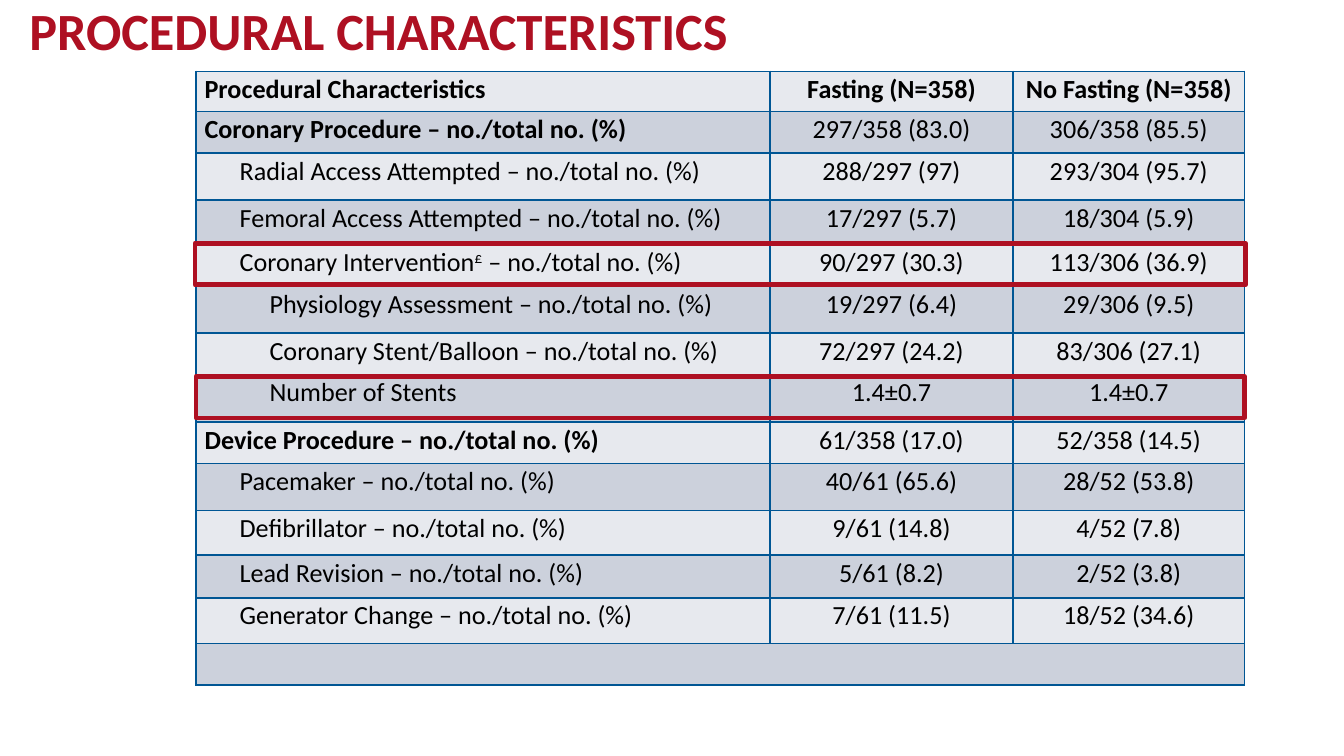
from dataclasses import dataclass

from lxml import etree
from pptx import Presentation
from pptx.dml.color import RGBColor
from pptx.enum import shapes, text
from pptx.oxml.ns import qn
from pptx.util import Pt


@dataclass(frozen=True)
class Theme:
    font: str = "Calibri"
    title_size: float = 28
    cell_size: float = 14
    accent: str = "AE1022"
    ink: str = "000000"
    border: str = "005694"
    bands: tuple = ("E7E9EE", "CCD1DC")


THEME = Theme()
INDENTS = (0, 18.8, 34.8)
COLUMN_WIDTHS = (307.4, 130.3, 123.9)
ROW_HEIGHTS = (21.6, 22.3, 25.2, 23.8, 22.3, 25.2, 22.3,
               25.2, 22.3, 25.2, 23.8, 23, 24.5, 22.3)
COUNT = " – no./total no. (%)"
ROWS = [
    (0, "Procedural Characteristics", "", "Fasting (N=358)", "No Fasting (N=358)"),
    (0, "Coronary Procedure", COUNT, "297/358 (83.0)", "306/358 (85.5)"),
    (1, "Radial Access Attempted", COUNT, "288/297 (97)", "293/304 (95.7)"),
    (1, "Femoral Access Attempted", COUNT, "17/297 (5.7)", "18/304 (5.9)"),
    (1, "Coronary Intervention£", COUNT, "90/297 (30.3)", "113/306 (36.9)"),
    (2, "Physiology Assessment", COUNT, "19/297 (6.4)", "29/306 (9.5)"),
    (2, "Coronary Stent/Balloon", COUNT, "72/297 (24.2)", "83/306 (27.1)"),
    (2, "Number of Stents", "", "1.4±0.7", "1.4±0.7"),
    (0, "Device Procedure", COUNT, "61/358 (17.0)", "52/358 (14.5)"),
    (1, "Pacemaker", COUNT, "40/61 (65.6)", "28/52 (53.8)"),
    (1, "Defibrillator", COUNT, "9/61 (14.8)", "4/52 (7.8)"),
    (1, "Lead Revision", COUNT, "5/61 (8.2)", "2/52 (3.8)"),
    (1, "Generator Change", COUNT, "7/61 (11.5)", "18/52 (34.6)"),
]


def rgb(color):
    return RGBColor.from_string(color)


def add_run(p, words, size, color, bold=False, superscript=False):
    r = p.add_run()
    r.text = words
    font = r.font
    font.name, font.size, font.bold = THEME.font, Pt(size), bold
    font.color.rgb = rgb(color)
    if superscript:
        r._r.get_or_add_rPr().set("baseline", "30000")


def add_title(s, words):
    sp = s.shapes.title
    sp.left, sp.top, sp.width, sp.height = Pt(8.6), Pt(4.3), Pt(601), Pt(34)
    tf = sp.text_frame
    tf.auto_size = text.MSO_AUTO_SIZE.NONE
    tf.vertical_anchor = text.MSO_ANCHOR.TOP
    p = tf.paragraphs[0]
    p.alignment = text.PP_ALIGN.LEFT
    p.line_spacing = Pt(25)
    add_run(p, words, THEME.title_size, THEME.accent, bold=True)


def style_cell(cell, color):
    cell.margin_left = cell.margin_right = Pt(4.5)
    cell.margin_top = cell.margin_bottom = 0
    tcPr = cell._tc.get_or_add_tcPr()
    for side in ("a:lnL", "a:lnR", "a:lnT", "a:lnB"):
        ln = etree.SubElement(tcPr, qn(side), w=str(Pt(1)))
        fill = etree.SubElement(ln, qn("a:solidFill"))
        etree.SubElement(fill, qn("a:srgbClr"), val=THEME.border)
    cell.fill.solid()
    cell.fill.fore_color.rgb = rgb(color)


def write_cell(cell, pieces, align, bold, indent=0):
    p = cell.text_frame.paragraphs[0]
    p.alignment = align
    p.line_spacing = 1.07
    p.space_after = Pt(8)
    if indent:
        pPr = p._p.get_or_add_pPr()
        pPr.set("marL", str(Pt(indent)))
        pPr.set("indent", "0")
    for piece in filter(None, pieces):
        add_run(p, piece, THEME.cell_size, THEME.ink, bold, piece == "£")


def add_results_table(s):
    frame = s.shapes.add_table(len(ROW_HEIGHTS), len(COLUMN_WIDTHS), Pt(105.1), Pt(38.2),
                               Pt(sum(COLUMN_WIDTHS)), Pt(sum(ROW_HEIGHTS)))
    table = frame.table
    table.first_row = table.horz_banding = False
    for column, width in zip(table.columns, COLUMN_WIDTHS):
        column.width = Pt(width)
    for i, (row, height) in enumerate(zip(table.rows, ROW_HEIGHTS)):
        row.height = Pt(height)
        for cell in row.cells:
            style_cell(cell, THEME.bands[i % 2])
    for i, (level, label, suffix, *values) in enumerate(ROWS):
        name, mark, _ = label.partition("£")
        pieces = (name, mark, suffix) if mark else (name + suffix,)
        write_cell(table.cell(i, 0), pieces, text.PP_ALIGN.JUSTIFY, level == 0, INDENTS[level])
        for j, value in enumerate(values, 1):
            write_cell(table.cell(i, j), (value,), text.PP_ALIGN.CENTER, i == 0)
    last = len(ROW_HEIGHTS) - 1
    table.cell(last, 0).merge(table.cell(last, 2))
    for cell in table.rows[last].cells:
        cell.text_frame.paragraphs[0].font.size = Pt(THEME.cell_size)


def add_highlight(s, left, top, width):
    sp = s.shapes.add_shape(shapes.MSO_SHAPE.RECTANGLE, Pt(left), Pt(top), Pt(width), Pt(22.3))
    sp.shadow.inherit = False
    sp.fill.background()
    sp.line.color.rgb = rgb(THEME.accent)
    sp.line.width = Pt(2.5)
    etree.SubElement(sp.line._get_or_add_ln(), qn("a:round"))


def main():
    prs = Presentation()
    prs.slide_width, prs.slide_height = Pt(720), Pt(405)
    s = prs.slides.add_slide(prs.slide_layouts[5])
    add_title(s, "PROCEDURAL CHARACTERISTICS")
    add_results_table(s)
    add_highlight(s, 104.4, 130.3, 563)
    add_highlight(s, 105.1, 201.6, 561.6)
    prs.save("out.pptx")


if __name__ == "__main__":
    main()
